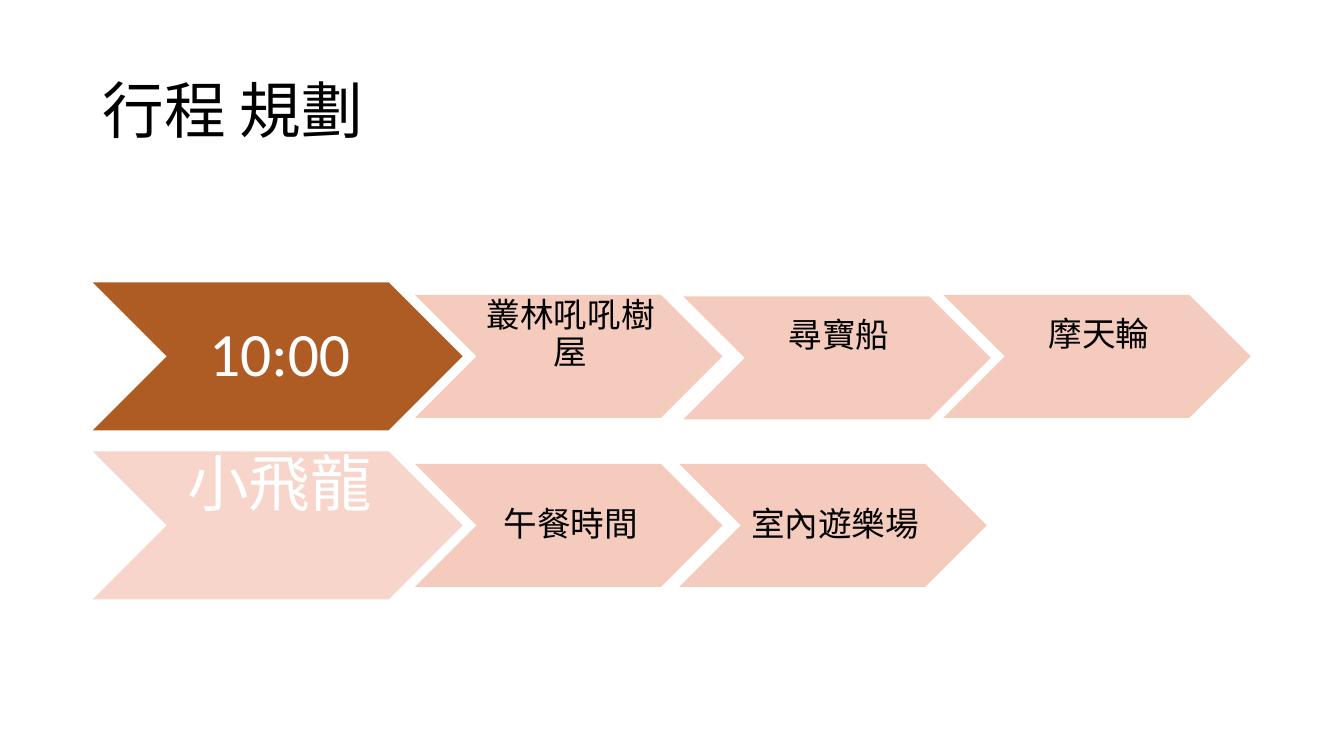
from dataclasses import dataclass

from lxml.etree import SubElement
from pptx import Presentation
from pptx.dml.color import RGBColor
from pptx.enum.shapes import MSO_SHAPE
from pptx.enum.text import MSO_ANCHOR, MSO_AUTO_SIZE, PP_ALIGN
from pptx.oxml.ns import qn
from pptx.util import Cm, Pt


@dataclass(frozen=True)
class Theme:
    font: str = "Calibri"
    large: int = 44
    small: int = 24
    black: str = "000000"
    white: str = "FFFFFF"
    brown: str = "AF5C24"
    pale: str = "F7D5CA"
    pink: str = "F5C6B6"


theme = Theme()


def write_text(shape, text, size, color, alignment):
    frame = shape.text_frame
    frame.word_wrap = True
    frame.auto_size = MSO_AUTO_SIZE.NONE
    frame.vertical_anchor = MSO_ANCHOR.MIDDLE
    paragraph = frame.paragraphs[0]
    paragraph.alignment = alignment
    paragraph.line_spacing = 0.9
    run = paragraph.add_run()
    run.text = text
    run.font.name = theme.font
    run.font.size = Pt(size)
    run.font.color.rgb = RGBColor.from_string(color)


def add_chevron(left, middle, width, height, fill, opacity, text, size, color, lift):
    """Add a chevron centred on middle; lift is the bottom inset that raises its text."""
    chevron = slide.shapes.add_shape(
        MSO_SHAPE.CHEVRON, Cm(left), Cm(middle - height / 2), Cm(width), Cm(height))
    chevron.shadow.inherit = False
    chevron.line.fill.background()
    chevron.fill.solid()
    chevron.fill.fore_color.rgb = RGBColor.from_string(fill)
    if opacity < 100:
        fill_color = chevron.fill._xPr.find(qn("a:solidFill"))[0]
        SubElement(fill_color, qn("a:alpha")).set("val", str(opacity * 1000))
    write_text(chevron, text, size, color, PP_ALIGN.CENTER)
    frame = chevron.text_frame
    frame.margin_left, frame.margin_right = Cm(0.1), 0
    frame.margin_top, frame.margin_bottom = Cm(0.05), Cm(0.05 + lift)


presentation = Presentation()
presentation.slide_width = Cm(33.87)
presentation.slide_height = Cm(19.05)
slide = presentation.slides.add_slide(presentation.slide_layouts[5])

title = slide.shapes.title
title.left, title.top, title.width, title.height = Cm(2.34), Cm(1.02), Cm(29.21), Cm(3.68)
write_text(title, "行程 規劃", theme.large, theme.black, PP_ALIGN.LEFT)

# Each row: middle, (heading, fill, lift), steps as (left, drop, text, lift)
rows = [
    (8.98, ("10:00", theme.brown, 0), [
        (10.46, 0, "叢林吼吼樹屋", 1.07),
        (17.22, 0.04, "尋寶船", 1.07),
        (23.77, 0, "摩天輪", 1.07),
    ]),
    (13.24, ("小飛龍", theme.pale, 1.95), [
        (10.46, 0, "午餐時間", 0),
        (17.12, 0, "室內遊樂場", 0),
    ]),
]
for middle, (heading, fill, heading_lift), steps in rows:
    add_chevron(2.34, middle, 9.32, 3.73, fill, 100,
                heading, theme.large, theme.white, heading_lift)
    for left, drop, text, lift in steps:
        add_chevron(left, middle + drop, 7.75, 3.1, theme.pink, 90,
                    text, theme.small, theme.black, lift)

presentation.save("out.pptx")
